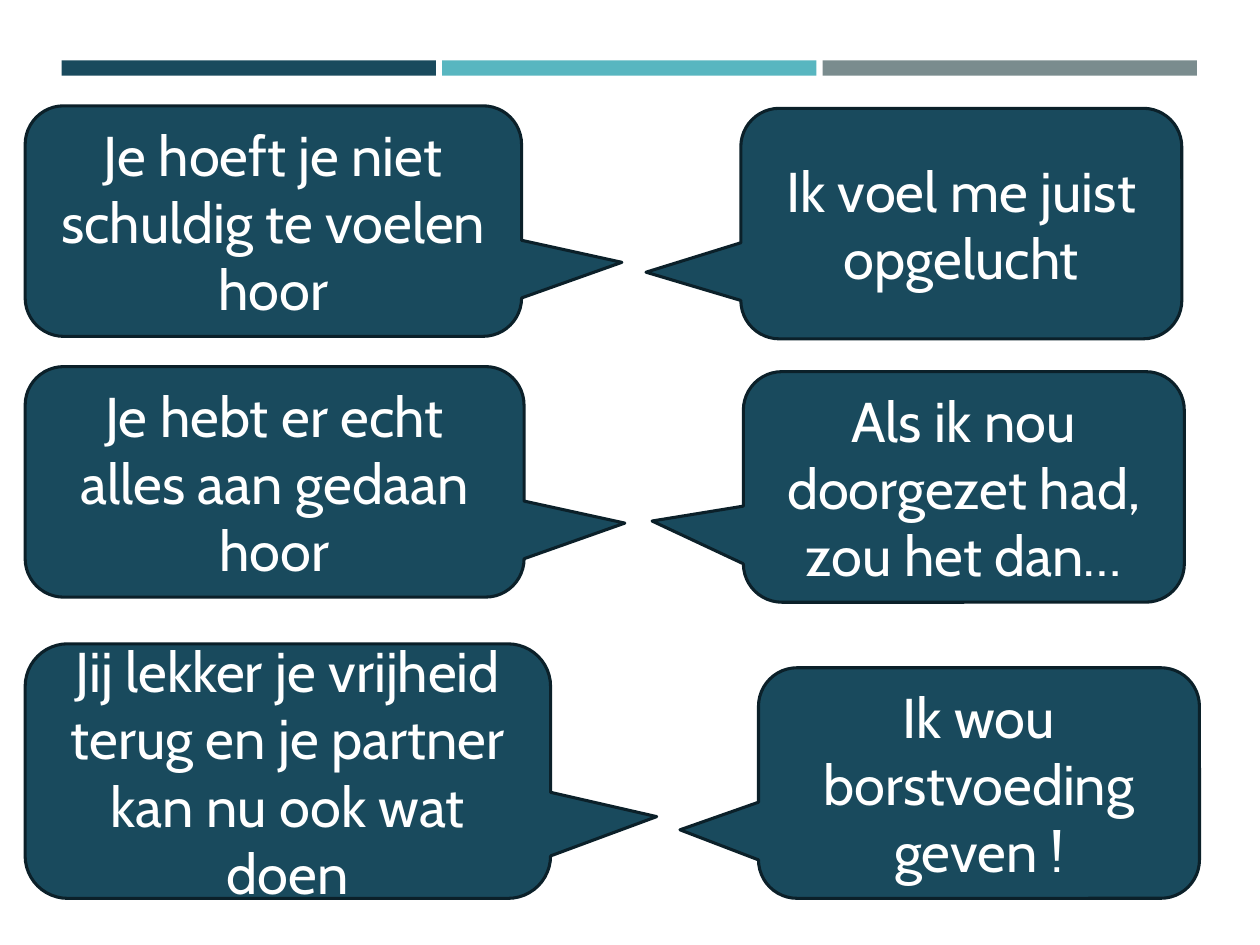
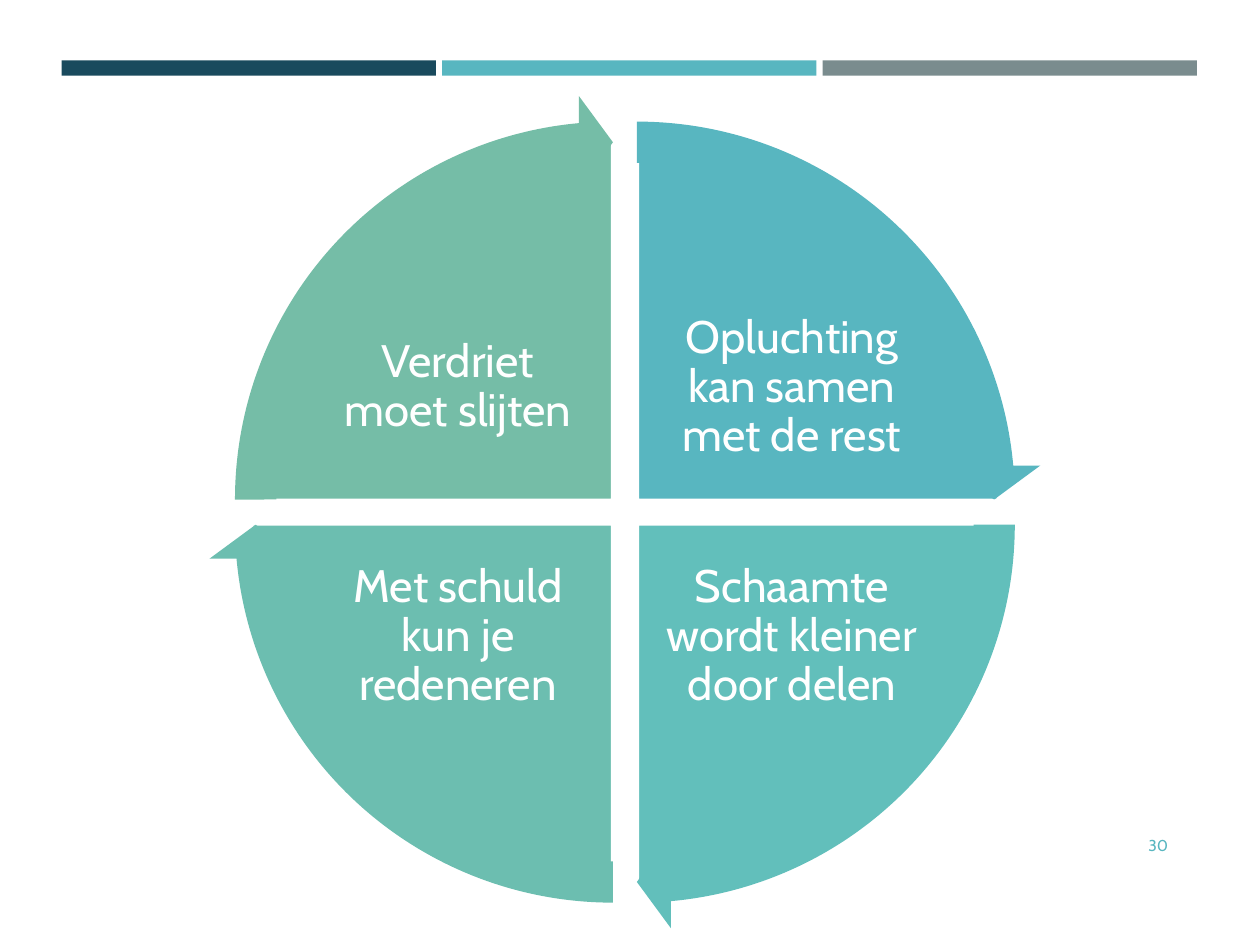
from pptx import Presentation
from pptx.dml.color import RGBColor
from pptx.enum import shapes, text
from pptx.util import Inches, Pt

NAVY = RGBColor(0x19, 0x4A, 0x5D)
NAVY_EDGE = RGBColor(0x0B, 0x20, 0x29)
AQUA = RGBColor(0x58, 0xB6, 0xC0)
GREY = RGBColor(0x7A, 0x8C, 0x8E)
TURQUOISE = RGBColor(0x62, 0xBF, 0xBB)
SEA = RGBColor(0x6C, 0xBE, 0xB0)
SAGE = RGBColor(0x75, 0xBD, 0xA7)
WHITE = RGBColor(0xFF, 0xFF, 0xFF)
FONT = "Cabin"

BAND_LEFT, BAND_RIGHT, BAND_WIDTH = 0.49, 9.5, 2.97
FULL_TURN, QUARTER_TURN = 216, 54
PIE_SIZE, ARROW_SIZE = 5.72, 6.43

BUBBLES = [
    ("Je hoeft je niet schuldig te voelen hoor", (0.2, 0.84, 3.94, 1.83), (0.702, 0.179)),
    ("Ik voel me juist opgelucht", (5.88, 0.86, 3.5, 1.83), (-0.715, 0.211)),
    ("Je hebt er echt alles aan gedaan hoor", (0.2, 2.91, 3.96, 1.83), (0.702, 0.179)),
    ("Als ik nou doorgezet had, zou het dan…", (5.9, 2.95, 3.5, 1.83), (-0.707, 0.148)),
    ("Jij lekker je vrijheid terug en je partner kan nu ook wat doen",
     (0.2, 5.11, 4.17, 2.02), (0.702, 0.179)),
    ("Ik wou borstvoeding geven !", (6.02, 5.3, 3.5, 1.83), (-0.678, 0.203)),
]

QUARTERS = [
    ("Opluchting kan samen met de rest", AQUA, True, True),
    ("Schaamte wordt kleiner door delen", TURQUOISE, True, False),
    ("Met schuld kun je redeneren", SEA, False, False),
    ("Verdriet moet slijten", SAGE, False, True),
]


def write(holder, words, size, color=WHITE, align=text.PP_ALIGN.CENTER,
          spacing=None, inset=None):
    frame = holder.text_frame
    frame.word_wrap = True
    frame.vertical_anchor = text.MSO_ANCHOR.MIDDLE
    if inset is not None:
        frame.margin_left = frame.margin_right = Inches(inset)
        frame.margin_top = frame.margin_bottom = Inches(inset)
    line = frame.paragraphs[0]
    line.alignment = align
    if spacing:
        line.line_spacing = spacing
    run = line.add_run()
    run.text = words
    run.font.name = FONT
    run.font.size = Pt(size)
    run.font.color.rgb = color


def add_label(slide, place, words, size, **style):
    write(slide.shapes.add_textbox(*map(Inches, place)), words, size, **style)


def add_figure(slide, preset, place, fill, edge=None, adjustments=()):
    figure = slide.shapes.add_shape(preset, *map(Inches, place))
    figure.shadow.inherit = False
    figure.fill.solid()
    figure.fill.fore_color.rgb = fill
    if edge is None:
        figure.line.fill.background()
    else:
        figure.line.color.rgb = edge
        figure.line.width = Pt(1.75)
    for index, value in enumerate(adjustments):
        figure.adjustments[index] = value
    return figure


def add_banded_slide(deck):
    slide = deck.slides.add_slide(deck.slide_layouts[6])
    pitch = (BAND_RIGHT - BAND_LEFT - BAND_WIDTH) / 2
    for index, color in enumerate((NAVY, AQUA, GREY)):
        place = (BAND_LEFT + index * pitch, 0.48, BAND_WIDTH, 0.12)
        add_figure(slide, shapes.MSO_SHAPE.RECTANGLE, place, color)
    return slide


def add_bubble(slide, words, place, tip):
    bubble = add_figure(slide, shapes.MSO_SHAPE.ROUNDED_RECTANGULAR_CALLOUT,
                        place, NAVY, NAVY_EDGE, (*tip, 0.167))
    write(bubble, words, 32)


def add_quarter(slide, words, color, right, top, start):
    place = (2.2 if right else 2, 1.11 if top else 1.3, PIE_SIZE, PIE_SIZE)
    end = (start + QUARTER_TURN) % FULL_TURN
    add_figure(slide, shapes.MSO_SHAPE.PIE, place, color, WHITE, (start, end))
    add_label(slide, (5.23 if right else 2.58, 2.29 if top else 4.27, 2.11, 1.57),
              words, 26, spacing=0.9, inset=0.04)


def add_cycle_arrow(slide, color, right, top, start):
    place = (1.84 if right else 1.65, 0.75 if top else 0.95, ARROW_SIZE, ARROW_SIZE)
    head = start + QUARTER_TURN - 3.275
    add_figure(slide, shapes.MSO_SHAPE.CIRCULAR_ARROW, place, color,
               adjustments=(0.051, 3.275, head, start, 0.059))


def build_conversation(deck):
    slide = add_banded_slide(deck)
    for words, place, tip in BUBBLES:
        add_bubble(slide, words, place, tip)


def build_cycle(deck):
    slide = add_banded_slide(deck)
    add_label(slide, (8.53, 6.51, 0.84, 0.4), "30", 9, color=AQUA,
              align=text.PP_ALIGN.RIGHT)
    starts = [(index + 3) * QUARTER_TURN % FULL_TURN for index in range(4)]
    for quarter, start in zip(QUARTERS, starts):
        add_quarter(slide, *quarter, start)
    for (_, color, right, top), start in zip(QUARTERS, starts):
        add_cycle_arrow(slide, color, right, top, start)


def main():
    deck = Presentation()
    deck.slide_width, deck.slide_height = Inches(10), Inches(7.5)
    build_conversation(deck)
    build_cycle(deck)
    deck.save("out.pptx")


if __name__ == "__main__":
    main()
